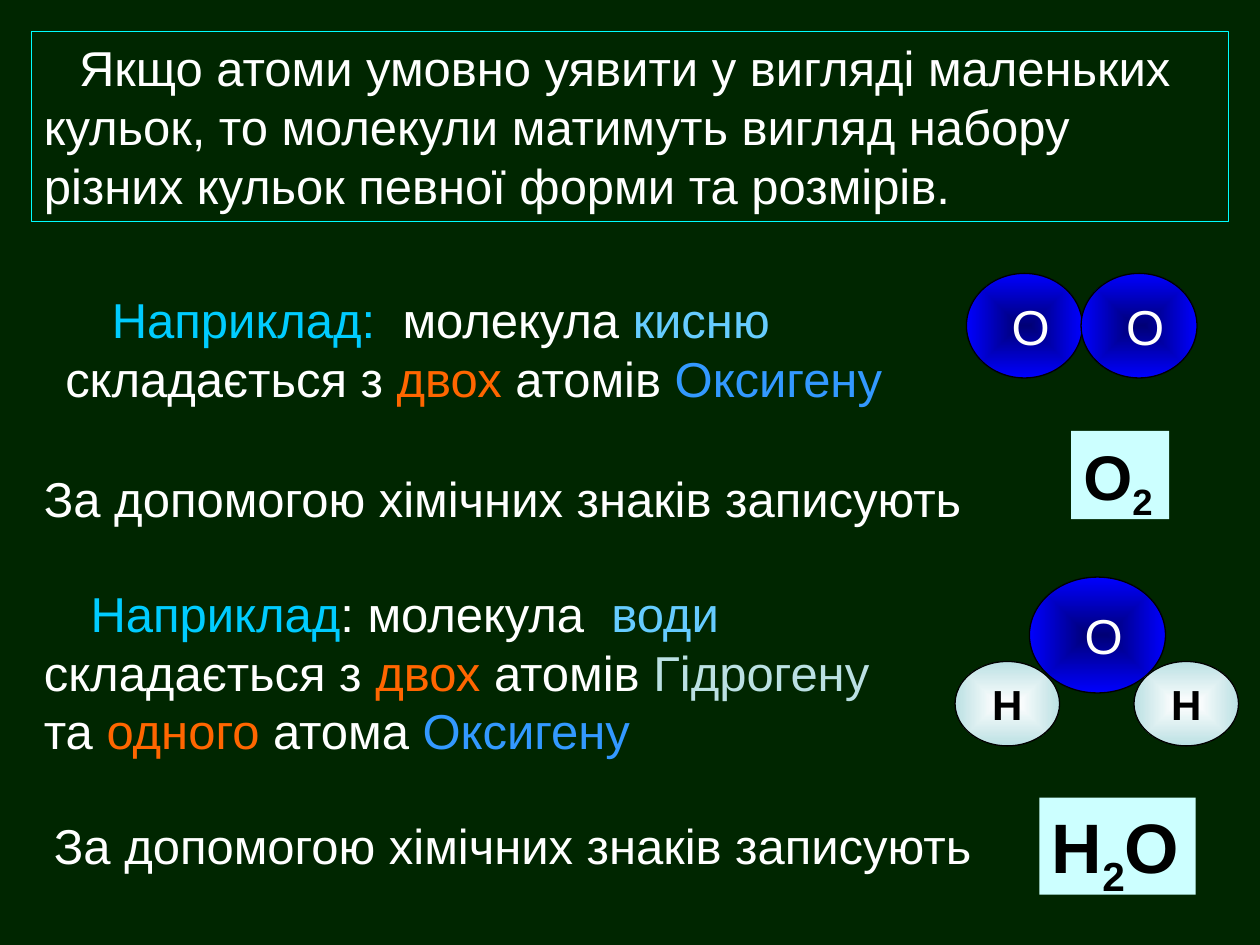
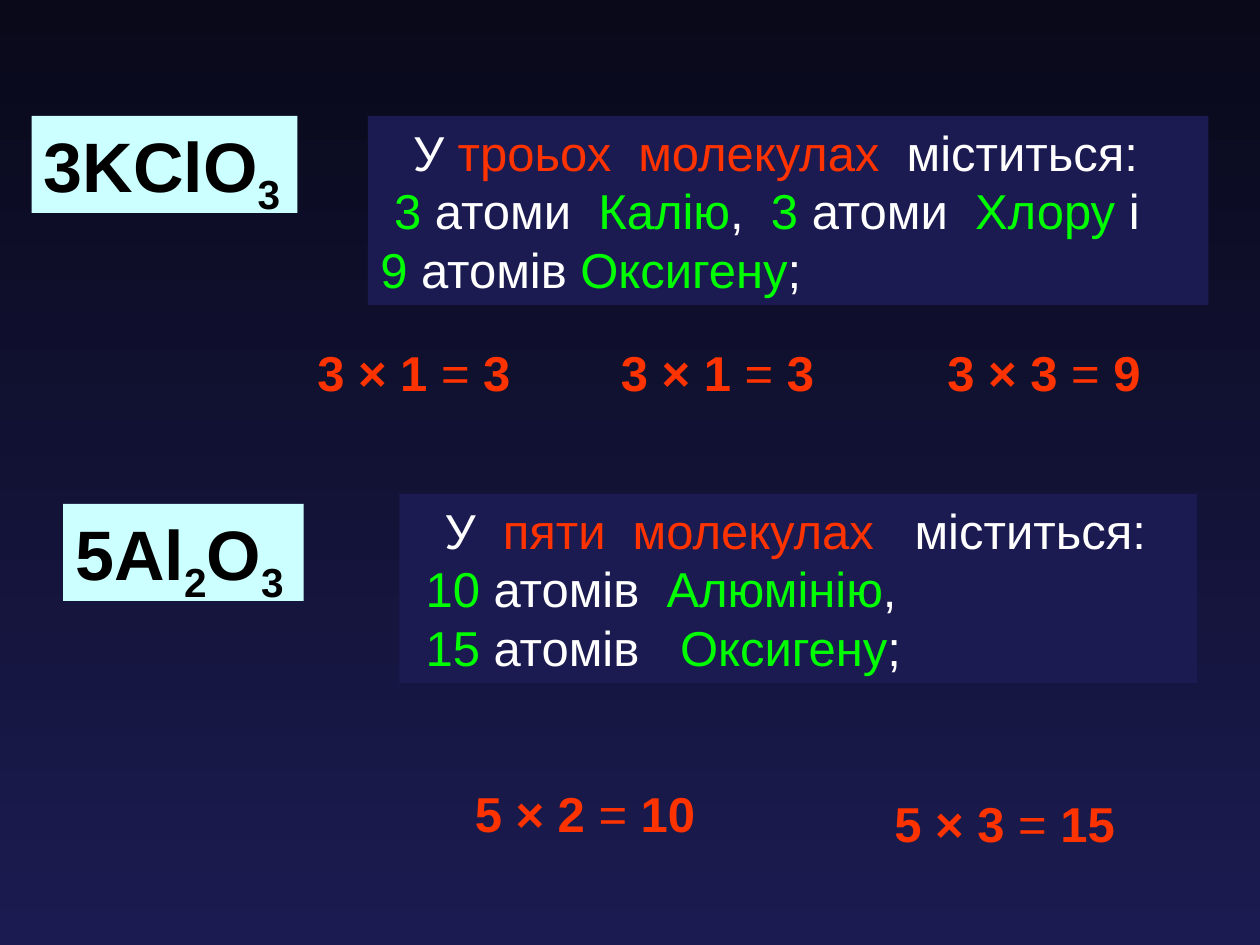
from lxml import etree
from pptx import Presentation
from pptx.dml.color import RGBColor
from pptx.enum.shapes import MSO_SHAPE
from pptx.enum.text import MSO_ANCHOR, PP_ALIGN
from pptx.oxml.ns import qn
from pptx.util import Inches, Pt

OVAL = MSO_SHAPE.OVAL
MIDDLE = MSO_ANCHOR.MIDDLE
CENTER = PP_ALIGN.CENTER

FONT = "Arial"
WHITE = RGBColor(0xFF, 0xFF, 0xFF)
BLACK = RGBColor(0x00, 0x00, 0x00)
DARK_GREEN = RGBColor(0x00, 0x26, 0x00)
NIGHT = RGBColor(0x09, 0x09, 0x1A)
INDIGO = RGBColor(0x1B, 0x1B, 0x51)
CYAN = RGBColor(0x00, 0xFF, 0xFF)
PALE_CYAN = RGBColor(0xCC, 0xFF, 0xFF)
TURQUOISE = RGBColor(0x00, 0xCC, 0xFF)
SKY = RGBColor(0x66, 0xCC, 0xFF)
BLUE = RGBColor(0x33, 0x99, 0xFF)
ORANGE = RGBColor(0xFF, 0x66, 0x00)
RED = RGBColor(0xFF, 0x33, 0x00)
GREEN = RGBColor(0x00, 0xFF, 0x00)
ICE = RGBColor(0xBB, 0xE0, 0xE3)
NAVY = RGBColor(0x00, 0x00, 0x76)
PURE_BLUE = RGBColor(0x00, 0x00, 0xFF)

# Text formats: size in points, weight and colour
BODY = {"size": Pt(28), "bold": False, "name": FONT}
EQUATION = {"size": Pt(28), "bold": True, "name": FONT}
HYDROGEN = {"size": Pt(24), "bold": True, "name": FONT}


def write_runs(paragraph, runs, text_format):
    """Write (text, colour) runs in one format."""
    for text, color in runs:
        run = paragraph.add_run()
        run.text = text
        for name, value in text_format.items():
            setattr(run.font, name, value)
        run.font.color.rgb = color


def add_box(slide, at, lines, text_format=BODY, fill=None, wrap=True):
    """Add a text box; each line is (first-line indent in inches, runs)."""
    box = slide.shapes.add_textbox(*map(Inches, at))
    if fill is not None:
        box.fill.solid()
        box.fill.fore_color.rgb = fill
    frame = box.text_frame
    frame.word_wrap = wrap
    for number, (indent, runs) in enumerate(lines):
        paragraph = frame.add_paragraph() if number else frame.paragraphs[0]
        if indent:
            paragraph._p.get_or_add_pPr().set("indent", str(Inches(indent)))
        write_runs(paragraph, runs, text_format)
    return box


presentation = Presentation()
presentation.slide_width = Inches(10)
presentation.slide_height = Inches(7.5)
blank = presentation.slide_layouts[6]

# Slide 1: molecules as sets of balls
molecules = presentation.slides.add_slide(blank)
molecules.background.fill.solid()
molecules.background.fill.fore_color.rgb = DARK_GREEN

intro = add_box(molecules, (0.25, 0.25, 9.5, 1.51), [(0.28, [
    ("Якщо атоми умовно уявити у вигляді маленьких кульок, то молекули "
     "матимуть вигляд набору різних кульок певної форми та розмірів.", WHITE)])])
intro.line.color.rgb = CYAN
intro.line.width = Pt(0.75)

# Examples and the sentences that lead to the formulas
add_box(molecules, (0.42, 2.25, 7, 1.03), [(0.37, [
    ("Наприклад: ", TURQUOISE), (" молекула ", WHITE), ("кисню", SKY),
    (" складається з ", WHITE), ("двох", ORANGE), (" атомів ", WHITE),
    ("Оксигену", BLUE)])])
add_box(molecules, (0.25, 4.58, 6.92, 1.5), [(0.37, [
    ("Наприклад", TURQUOISE), (": молекула ", WHITE), (" води", SKY),
    (" складається з ", WHITE), ("двох", ORANGE), (" атомів ", WHITE),
    ("Гідрогену ", ICE), ("та ", WHITE), ("одного", ORANGE),
    (" атома ", WHITE), ("Оксигену", BLUE)])])
for left, top in [(0.25, 3.67), (0.33, 6.42)]:
    add_box(molecules, (left, top, 7.75, 0.57),
            [(0, [("За допомогою хімічних знаків записують", WHITE)])])

# Atoms: place, letter, text colour, format, centre and edge colour, left inset
oxygen = ("О", WHITE, BODY, NAVY, PURE_BLUE, 0.1)
hydrogen = ("Н", BLACK, HYDROGEN, WHITE, ICE, 0)
atoms = [
    ((7.67, 2.17, 0.92, 0.83), oxygen),
    ((8.58, 2.17, 0.92, 0.83), oxygen),
    ((8.17, 4.58, 1.08, 0.92), oxygen),
    ((7.58, 5.25, 0.83, 0.67), hydrogen),
    ((9, 5.25, 0.83, 0.67), hydrogen),
]
for at, (letter, color, text_format, center, edge, inset) in atoms:
    atom = molecules.shapes.add_shape(OVAL, *map(Inches, at))
    atom.shadow.inherit = False
    atom.line.color.rgb = BLACK
    atom.line.width = Pt(0.75)
    atom.fill.gradient()
    for stop, stop_color in zip(atom.fill.gradient_stops, (center, edge)):
        stop.color.rgb = stop_color
    # Radiate from the centre instead of along a line
    gradient = atom._element.spPr.find(qn("a:gradFill"))
    linear = gradient.find(qn("a:lin"))
    radial = etree.Element(qn("a:path"), {"path": "shape"})
    etree.SubElement(radial, qn("a:fillToRect"),
                     dict.fromkeys("ltrb", "50000"))
    gradient.replace(linear, radial)
    frame = atom.text_frame
    frame.word_wrap = True
    frame.vertical_anchor = MIDDLE
    frame.margin_left = Inches(inset)
    frame.margin_right = 0
    frame.paragraphs[0].alignment = CENTER
    write_runs(frame.paragraphs[0], [(letter, color)], text_format)

# Slide 2: counting atoms
counting = presentation.slides.add_slide(blank)
background = counting.background.fill
background.gradient()
background.gradient_angle = 270
for stop, stop_color in zip(background.gradient_stops, (NIGHT, INDIGO)):
    stop.color.rgb = stop_color

add_box(counting, (2.92, 0.92, 6.67, 1.5), [
    (0.26, [("У ", WHITE), ("троьох  молекулах  ", RED), ("міститься:", WHITE)]),
    (0.11, [("3", GREEN), (" атоми  ", WHITE), ("Калію", GREEN), (",  ", WHITE),
            ("3 ", GREEN), ("атоми  ", WHITE), ("Хлору", GREEN), (" і", WHITE)]),
    (0, [("9", GREEN), (" атомів ", WHITE), ("Оксигену", GREEN), (";", WHITE)]),
], fill=INDIGO)
add_box(counting, (3.17, 3.92, 6.33, 1.5), [
    (0.26, [("У  ", WHITE), ("пяти  молекулах  ", RED), (" міститься:", WHITE)]),
    (0.11, [("10", GREEN), (" атомів  ", WHITE), ("Алюмінію", GREEN), (",", WHITE)]),
    (0.11, [("15", GREEN), (" атомів   ", WHITE), ("Оксигену", GREEN), (";", WHITE)]),
], fill=INDIGO)

# Multiplications, with a lighter equals sign
equations = [
    ((2.42, 2.67, 2, 0.57), "3 × 1 ", "3"),
    ((4.83, 2.67, 1.92, 0.57), "3 × 1 ", "3"),
    ((7.42, 2.67, 1.75, 0.57), "3 × 3 ", "9"),
    ((3.67, 6.17, 2.17, 0.57), "5 × 2 ", "10"),
    ((7, 6.25, 2.08, 0.57), "5 × 3 ", "15"),
]
for at, product, result in equations:
    equation = add_box(counting, at, [
        (0, [(product, RED), ("= ", RED), (result, RED)])], EQUATION)
    equation.text_frame.paragraphs[0].runs[1].font.bold = False

# Formula cards on both slides; every second part is a subscript
formulas = [
    (molecules, (8.5, 3.42, 0.78, 0.7), 36, ["О", "2"]),
    (molecules, (8.25, 6.33, 1.24, 0.77), 40, ["Н", "2", "О"]),
    (counting, (0.25, 0.92, 2.11, 0.77), 40, ["3KClO", "3"]),
    (counting, (0.5, 4, 1.91, 0.77), 40, ["5Al", "2", "O", "3"]),
]
for slide, at, size, parts in formulas:
    card = add_box(slide, at, [(0, [(part, BLACK) for part in parts])],
                   {"size": Pt(size), "bold": True, "name": FONT},
                   fill=PALE_CYAN, wrap=False)
    for subscript in card.text_frame.paragraphs[0].runs[1::2]:
        subscript.font._element.set("baseline", "-25000")

presentation.save("out.pptx")
